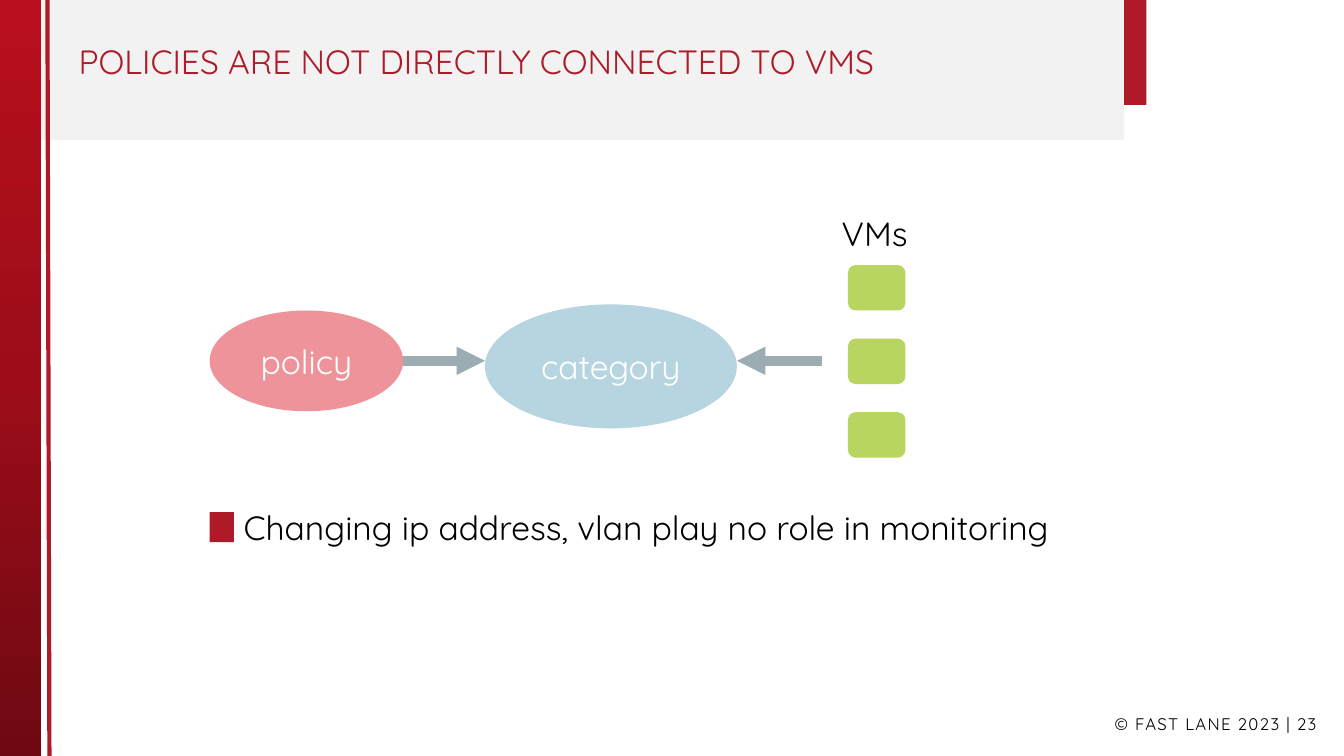
from copy import deepcopy

from lxml.etree import SubElement
from pptx import Presentation
from pptx.dml.color import RGBColor
from pptx.enum.shapes import MSO_CONNECTOR, MSO_SHAPE
from pptx.enum.text import MSO_ANCHOR, MSO_AUTO_SIZE, PP_ALIGN
from pptx.oxml.ns import qn
from pptx.util import Inches, Pt

WIDTH, HEIGHT = Inches(13.33), Inches(7.5)
FONT = "Quicksand"

BLACK = RGBColor(0x00, 0x00, 0x00)
WHITE = RGBColor(0xFF, 0xFF, 0xFF)
RED = RGBColor(0xAE, 0x1A, 0x27)
BRIGHT_RED = RGBColor(0xB9, 0x0F, 0x1E)
MIDDLE_RED = RGBColor(0x9C, 0x0D, 0x19)
DARK_RED = RGBColor(0x6E, 0x09, 0x12)
PALE_GRAY = RGBColor(0xF2, 0xF2, 0xF2)
ARROW_GRAY = RGBColor(0x9B, 0xAC, 0xB2)
PINK = RGBColor(0xEF, 0x93, 0x9B)
BLUE = RGBColor(0xB7, 0xD5, 0xE0)
GREEN = RGBColor(0xB7, 0xD5, 0x60)

# All positions are percentages of the slide's width and height
ARROW_ROW = 47.73
VM_COLUMN, VM_TOP, VM_STEP, VM_COUNT = 63.09, 35.07, 9.73, 3


def across(percent):
    return round(WIDTH * percent / 100)


def down(percent):
    return round(HEIGHT * percent / 100)


def area(left, top, width, height):
    return across(left), down(top), across(width), down(height)


def add_run(paragraph, text, color, size=24):
    run = paragraph.add_run()
    run.text = text
    run.font.name = FONT
    run.font.size = Pt(size)
    run.font.color.rgb = color
    return run


def add_block(slide, kind, box, color, label=None):
    shape = slide.shapes.add_shape(kind, *area(*box))
    shape.shadow.inherit = False
    shape.line.fill.background()
    shape.fill.solid()
    shape.fill.fore_color.rgb = color
    if label:
        frame = shape.text_frame
        frame.vertical_anchor = MSO_ANCHOR.MIDDLE
        frame.paragraphs[0].alignment = PP_ALIGN.CENTER
        add_run(frame.paragraphs[0], label, WHITE)
    return shape


def add_label(slide, box, text):
    frame = slide.shapes.add_textbox(*area(*box)).text_frame
    frame.word_wrap = False
    frame.auto_size = MSO_AUTO_SIZE.SHAPE_TO_FIT_TEXT
    add_run(frame.paragraphs[0], text, BLACK)


def add_line(slide, start, end, color, weight, arrow=False):
    connector = slide.shapes.add_connector(
        MSO_CONNECTOR.STRAIGHT,
        across(start[0]), down(start[1]), across(end[0]), down(end[1]))
    connector.line.color.rgb = color
    connector.line.width = Pt(weight)
    if arrow:
        SubElement(connector.line._get_or_add_ln(), qn("a:tailEnd"), type="triangle")
    SubElement(connector._element.spPr, qn("a:effectLst"))


def add_side_bar(slide):
    fill = add_block(slide, MSO_SHAPE.RECTANGLE, (0, 0, 3.05, 100), DARK_RED).fill
    fill.gradient()
    fill.gradient_angle = 270
    first = fill.gradient_stops[0]._gs
    first.addnext(deepcopy(first))
    stops = zip(fill.gradient_stops, (0, 0.5, 1), (BRIGHT_RED, MIDDLE_RED, DARK_RED))
    for stop, position, color in stops:
        stop.position = position
        stop.color.rgb = color


def add_footer(slide):
    frame = slide.shapes.add_textbox(*area(81.32, 93.73, 17.4, 4.53)).text_frame
    frame.word_wrap = True
    frame.paragraphs[0].alignment = PP_ALIGN.RIGHT
    run = add_run(frame.paragraphs[0], "© FAST LANE 2023 | 23", BLACK, 12)
    run.font._element.set("spc", "90")


def place_title(slide):
    title = slide.shapes.title
    title.left, title.top, title.width, title.height = area(5.1, 5.33, 74.94, 8.53)
    frame = title.text_frame
    frame.word_wrap = True
    frame.auto_size = MSO_AUTO_SIZE.NONE
    frame.vertical_anchor = MSO_ANCHOR.TOP
    paragraph = frame.paragraphs[0]
    paragraph.alignment = PP_ALIGN.LEFT
    paragraph.line_spacing = 0.9
    add_run(paragraph, "POLICIES ARE NOT DIRECTLY CONNECTED TO VMS", RED)
    # Bring the title in front of the header band
    slide.shapes._spTree.append(title._element)


def main():
    presentation = Presentation()
    presentation.slide_width, presentation.slide_height = WIDTH, HEIGHT
    slide = presentation.slides.add_slide(presentation.slide_layouts[5])

    # Page frame
    add_footer(slide)
    add_block(slide, MSO_SHAPE.RECTANGLE, (0, 0, 83.65, 18.53), PALE_GRAY)
    add_block(slide, MSO_SHAPE.RECTANGLE, (83.65, 0, 1.65, 13.87), RED)
    add_line(slide, (3.68, 100), (3.53, 0), RED, 3)
    add_side_bar(slide)
    place_title(slide)

    # Statement with its square marker
    add_label(slide, (17.4, 66.4, 65.19, 6.67),
              "Changing ip address, vlan play no role in monitoring")
    add_block(slide, MSO_SHAPE.RECTANGLE, (15.6, 67.73, 1.8, 4), RED)

    # Policy and category
    add_block(slide, MSO_SHAPE.OVAL, (15.6, 41.07, 14.4, 13.33), PINK, "policy")
    add_block(slide, MSO_SHAPE.OVAL, (36.08, 40.27, 18.75, 16.4), BLUE, "category")

    # Virtual machines
    for index in range(VM_COUNT):
        box = (VM_COLUMN, VM_TOP + index * VM_STEP, 4.28, 6)
        add_block(slide, MSO_SHAPE.ROUNDED_RECTANGLE, box, GREEN)
    add_label(slide, (61.89, 27.47, 6.6, 6.67), "VMs")

    # Arrows into the category
    for start, end in ((30, 36.08), (61.14, 54.84)):
        add_line(slide, (start, ARROW_ROW), (end, ARROW_ROW), ARROW_GRAY, 6.75, arrow=True)

    presentation.save("out.pptx")


if __name__ == "__main__":
    main()
